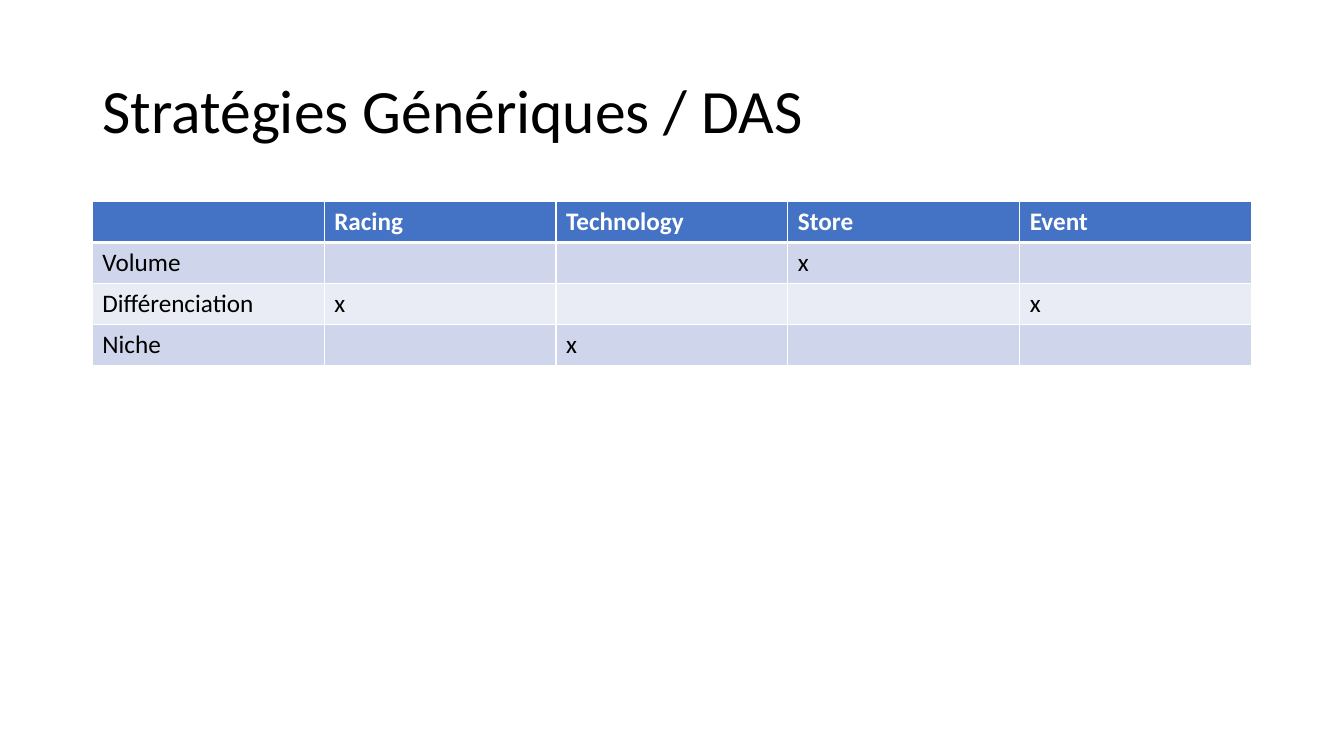
from dataclasses import dataclass

from lxml import etree
from pptx import Presentation
from pptx.dml.color import RGBColor
from pptx.enum import text
from pptx.oxml import ns
from pptx.util import Pt

HUES = {
    "head": "4472C4",
    "odd": "CFD5EA",
    "even": "E9EBF5",
    "white": "FFFFFF",
    "black": "000000",
}
FACE = "Calibri"
LEFT, WIDTH = 66, 828
TOP, HIGH = 144, 29.2
AREAS = ["Racing", "Technology", "Store", "Event"]


@dataclass
class Plan:
    name: str
    areas: list[str]


PLANS = [
    Plan("Volume", ["Store"]),
    Plan("Différenciation", ["Racing", "Event"]),
    Plan("Niche", ["Technology"]),
]


def tint(name: str) -> RGBColor:
    return RGBColor.from_string(HUES[name])


def style(para, size: float, hue: str, bold: bool = False) -> None:
    font = para.font
    font.name, font.size, font.bold = FACE, Pt(size), bold
    font.color.rgb = tint(hue)


def edge(cell, side: str, width: float) -> None:
    props = cell._tc.get_or_add_tcPr()
    line = etree.SubElement(props, ns.qn(f"a:ln{side}"), w=str(Pt(width)))
    fill = etree.SubElement(line, ns.qn("a:solidFill"))
    etree.SubElement(fill, ns.qn("a:srgbClr"), val=HUES["white"])


def draw_title(slide, words: str) -> None:
    box = slide.shapes.add_textbox(Pt(LEFT), Pt(28.8), Pt(WIDTH), Pt(104.4))
    frame = box.text_frame
    frame.word_wrap = True
    frame.vertical_anchor = text.MSO_ANCHOR.MIDDLE
    frame.text = words
    para = frame.paragraphs[0]
    para.line_spacing = 0.9
    style(para, 44, "black")


def draw_cell(cell, words: str, row: int) -> None:
    head = row == 0
    cell.text = words
    style(cell.text_frame.paragraphs[0], 18, "white" if head else "black", head)
    # Borders come before the fill in the cell properties
    for side in "LRTB":
        thick = (head and side == "B") or (row == 1 and side == "T")
        edge(cell, side, 3 if thick else 1)
    cell.fill.solid()
    cell.fill.fore_color.rgb = tint("head" if head else "odd" if row % 2 else "even")


def draw_grid(slide, plans: list[Plan]) -> None:
    rows = [["", *AREAS]]
    for plan in plans:
        marks = ["x" if area in plan.areas else "" for area in AREAS]
        rows.append([plan.name, *marks])
    grid = slide.shapes.add_table(
        len(rows), len(rows[0]), Pt(LEFT), Pt(TOP), Pt(WIDTH), Pt(HIGH * len(rows))
    ).table
    for r, row in enumerate(rows):
        for c, words in enumerate(row):
            draw_cell(grid.cell(r, c), words, r)


def main() -> None:
    deck = Presentation()
    deck.slide_width, deck.slide_height = Pt(960), Pt(540)
    slide = deck.slides.add_slide(deck.slide_layouts[6])

    # Title
    draw_title(slide, "Stratégies Génériques / DAS")

    # Strategies by business area
    draw_grid(slide, PLANS)

    deck.save("out.pptx")


if __name__ == "__main__":
    main()
